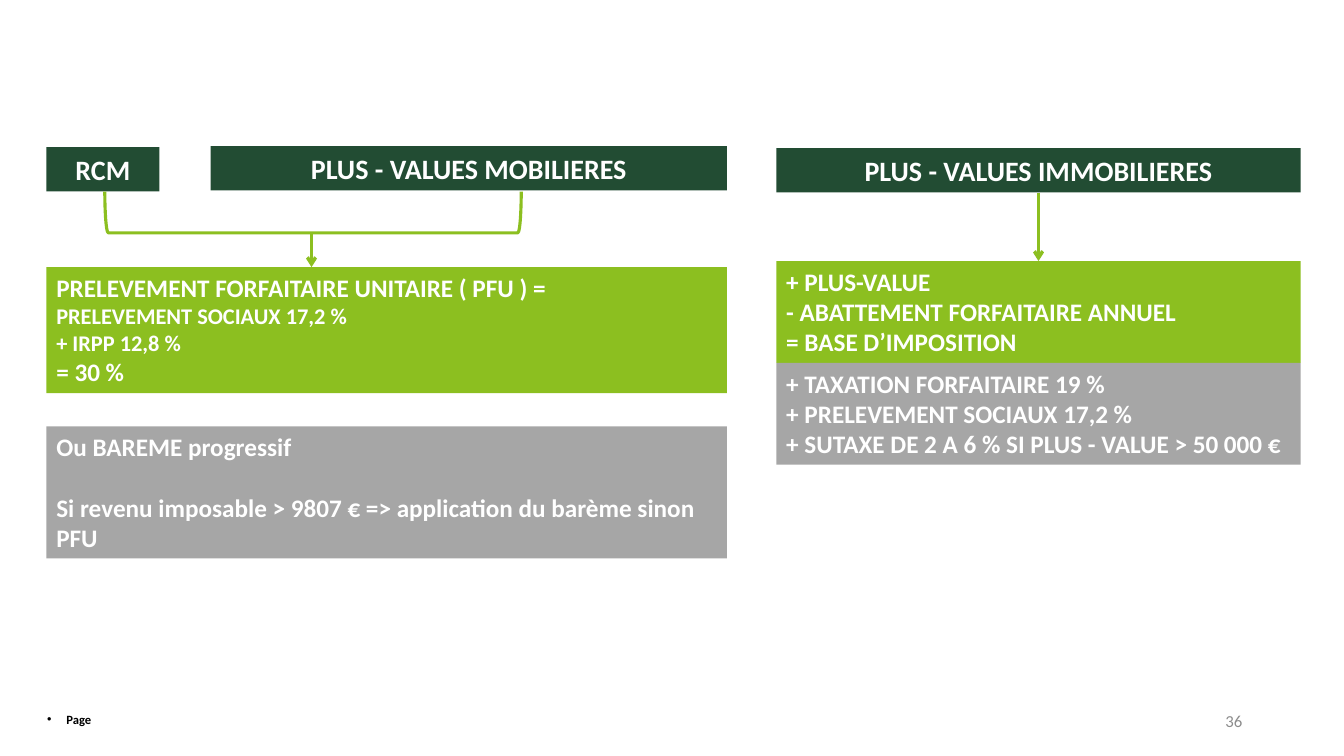
import pptx
import pptx.util
import pptx.dml.color
import pptx.enum.shapes
import pptx.enum.text
import pptx.oxml
import pptx.oxml.ns
from pptx.util import Inches

RGBColor = pptx.dml.color.RGBColor
DARK_GREEN = RGBColor(0x22, 0x4C, 0x33)
GREEN = RGBColor(0x8C, 0xBF, 0x20)
GREY = RGBColor(0xA6, 0xA6, 0xA6)
NUMBER_GREY = RGBColor(0x8C, 0x8C, 0x8C)
WHITE = RGBColor(0xFF, 0xFF, 0xFF)
BLACK = RGBColor(0, 0, 0)
ALIGN = pptx.enum.text.PP_ALIGN
ANCHOR = pptx.enum.text.MSO_ANCHOR
SHAPE = pptx.enum.shapes.MSO_SHAPE
FONT = "Calibri"
LINE_WIDTH = pptx.util.Pt(2.25)


def write(paragraph, text, size, color, bold, align):
    """Add one formatted run to a paragraph."""
    paragraph.alignment = align
    run = paragraph.add_run()
    run.text = text
    run.font.name = FONT
    run.font.size = pptx.util.Pt(size)
    run.font.bold = bold
    run.font.color.rgb = color


def add_box(slide, left, top, width, height, fill, lines, align=ALIGN.LEFT):
    """Draw a filled rectangle holding (text, size, space before) lines."""
    box = slide.shapes.add_shape(
        SHAPE.RECTANGLE, Inches(left), Inches(top), Inches(width), Inches(height))
    box.shadow.inherit = False
    box.fill.solid()
    box.fill.fore_color.rgb = fill
    box.line.fill.background()
    frame = box.text_frame
    frame.word_wrap = True
    frame.vertical_anchor = ANCHOR.TOP
    for index, (text, size, gap) in enumerate(lines):
        paragraph = frame.add_paragraph() if index else frame.paragraphs[0]
        if gap:
            paragraph.space_before = pptx.util.Pt(gap)
        write(paragraph, text, size, WHITE, True, align)
    return box


def add_heading(slide, left, top, width, text):
    """Draw a dark heading bar with centred text."""
    return add_box(slide, left, top, width, 0.44, DARK_GREEN,
                   [(text, 20, 0)], ALIGN.CENTER)


def add_arrow(slide, x, top, bottom):
    """Draw a green arrow pointing straight down."""
    arrow = slide.shapes.add_connector(
        pptx.enum.shapes.MSO_CONNECTOR.STRAIGHT,
        Inches(x), Inches(top), Inches(x), Inches(bottom))
    arrow.line.color.rgb = GREEN
    arrow.line.width = LINE_WIDTH
    properties = arrow.line._get_or_add_ln()
    tail = pptx.oxml.parse_xml(
        '<a:tailEnd %s type="arrow"/>' % pptx.oxml.ns.nsdecls("a"))
    properties.append(tail)
    effects = pptx.oxml.parse_xml("<a:effectLst %s/>" % pptx.oxml.ns.nsdecls("a"))
    properties.getparent().append(effects)
    return arrow


def add_bracket(slide, left, top, width, height):
    """Draw a green bracket turned to open upwards."""
    bracket = slide.shapes.add_shape(
        SHAPE.LEFT_BRACKET, Inches(left), Inches(top), Inches(width), Inches(height))
    bracket.rotation = 270
    bracket.shadow.inherit = False
    bracket.fill.background()
    bracket.line.color.rgb = GREEN
    bracket.line.width = LINE_WIDTH


def add_label(slide, left, top, width, height):
    """Add an empty text box and return its frame."""
    label = slide.shapes.add_textbox(
        Inches(left), Inches(top), Inches(width), Inches(height))
    label.text_frame.word_wrap = True
    return label.text_frame


def add_footer(slide):
    """Add the bulleted page label and the page number."""
    page_label = add_label(slide, 0.37, 7.01, 0.63, 0.25)
    page_label.margin_right = 0
    paragraph = page_label.paragraphs[0]
    properties = paragraph._p.get_or_add_pPr()
    properties.set("marL", str(Inches(0.19)))
    properties.set("indent", str(Inches(-0.19)))
    properties.append(pptx.oxml.parse_xml(
        '<a:buFont %s typeface="Arial"/>' % pptx.oxml.ns.nsdecls("a")))
    properties.append(pptx.oxml.parse_xml(
        '<a:buChar %s char="•"/>' % pptx.oxml.ns.nsdecls("a")))
    write(paragraph, "Page", 9, BLACK, True, ALIGN.LEFT)

    page_number = add_label(slide, 9.42, 6.95, 3, 0.4)
    page_number.vertical_anchor = ANCHOR.MIDDLE
    write(page_number.paragraphs[0], "36", 12, NUMBER_GREY, False, ALIGN.RIGHT)


def add_movable_gains(slide):
    """Build the left side on investment income and securities."""
    add_heading(slide, 2.09, 1.45, 5.12, "PLUS - VALUES MOBILIERES")
    add_heading(slide, 0.46, 1.46, 1.12, "RCM")
    add_box(slide, 0.46, 2.65, 6.75, 1.25, GREEN, [
        ("PRELEVEMENT FORFAITAIRE UNITAIRE ( PFU ) =", 18, 0),
        ("PRELEVEMENT SOCIAUX 17,2 %", 16, 0),
        ("+ IRPP 12,8 %", 16, 0),
        ("= 30 %", 18, 0)])
    add_box(slide, 0.46, 4.23, 6.75, 1.31, GREY, [
        ("Ou BAREME progressif", 18, 0),
        ("Si revenu imposable > 9807 € => application du barème sinon PFU", 18, 22)])
    add_arrow(slide, 3.09, 2.31, 2.65)
    add_bracket(slide, 2.9, 0.04, 0.41, 4.13)


def add_property_gains(slide):
    """Build the right side on real estate gains."""
    heading = add_heading(slide, 7.7, 1.47, 5.2, "PLUS - VALUES IMMOBILIERES")
    tax_base = add_box(slide, 7.7, 2.59, 5.2, 1.01, GREEN, [
        ("+ PLUS-VALUE", 18, 0),
        ("- ABATTEMENT FORFAITAIRE ANNUEL", 18, 0),
        ("= BASE D’IMPOSITION", 18, 0)])
    add_box(slide, 7.7, 3.6, 5.2, 1.01, GREY, [
        ("+ TAXATION FORFAITAIRE 19 %", 18, 0),
        ("+ PRELEVEMENT SOCIAUX 17,2 %", 18, 0),
        ("+ SUTAXE DE 2 A 6 % SI PLUS - VALUE > 50 000 €", 18, 0)])
    arrow = add_arrow(slide, 10.3, 1.91, 2.59)
    arrow.begin_connect(heading, 2)
    arrow.end_connect(tax_base, 0)


def main():
    """Build and save the slide on capital gains taxation."""
    presentation = pptx.Presentation()
    presentation.slide_width = Inches(13.33)
    presentation.slide_height = Inches(7.5)
    slide = presentation.slides.add_slide(presentation.slide_layouts[6])
    add_footer(slide)
    add_property_gains(slide)
    add_movable_gains(slide)
    presentation.save("out.pptx")


if __name__ == "__main__":
    main()
